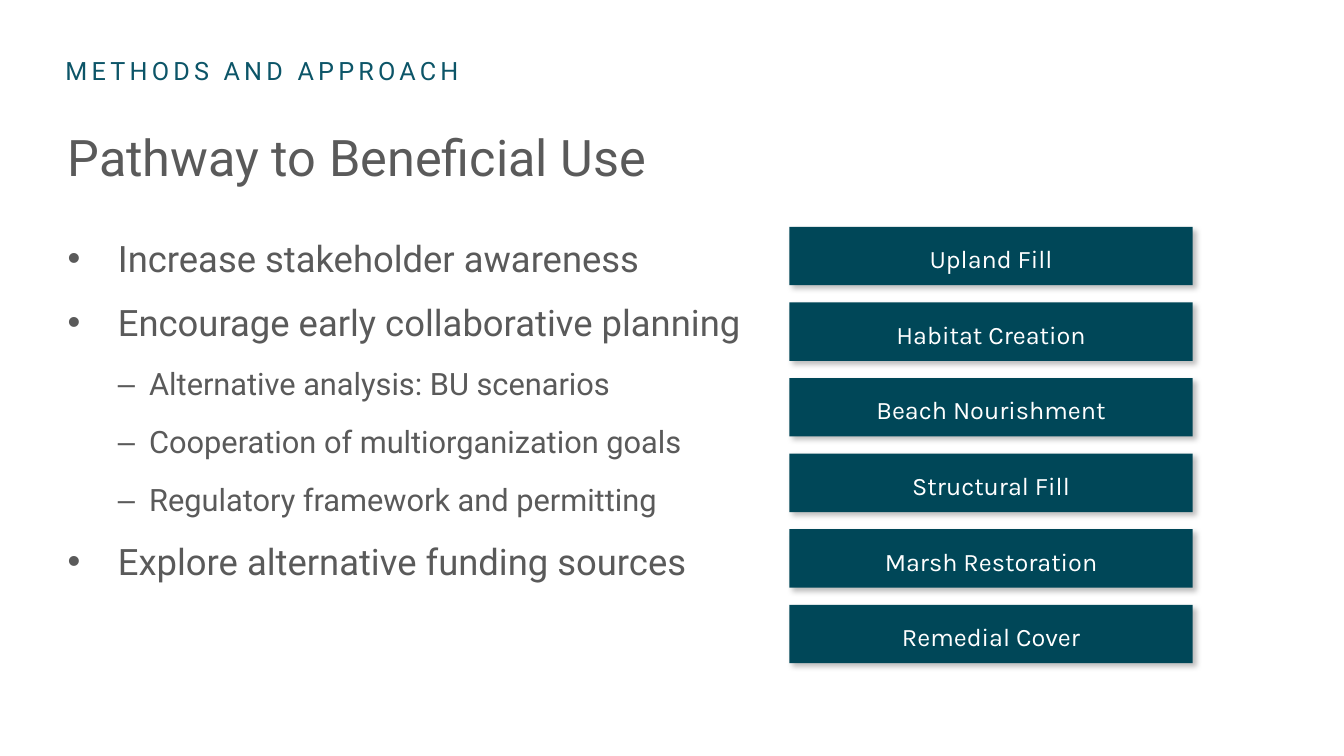
from lxml import etree
from pptx import Presentation
from pptx.dml.color import RGBColor
from pptx.enum.shapes import MSO_SHAPE
from pptx.enum.text import MSO_ANCHOR, PP_ALIGN
from pptx.oxml import parse_xml
from pptx.oxml.ns import qn
from pptx.util import Inches, Pt

RECT = MSO_SHAPE.RECTANGLE
TOP, MIDDLE = MSO_ANCHOR.TOP, MSO_ANCHOR.MIDDLE
LEFT, CENTER = PP_ALIGN.LEFT, PP_ALIGN.CENTER

TEAL, DEEP, GRAY, WHITE = "0C5568", "004758", "5A5A5A", "FFFFFF"
SHADOW = """<a:effectLst
 xmlns:a="http://schemas.openxmlformats.org/drawingml/2006/main">
 <a:outerShdw blurRad="50800" dist="38100" dir="2700000" algn="tl" rotWithShape="0">
 <a:srgbClr val="000000"><a:alpha val="25000"/></a:srgbClr>
 </a:outerShdw></a:effectLst>"""

# Per level: bullet sign, text size, left margin, hanging indent
LEVELS = [("•", 26, 0.5, -0.5), ("–", 22, 0.81, -0.31)]
POINTS = [
    (0, "Increase stakeholder awareness"),
    (0, "Encourage early collaborative planning"),
    (1, "Alternative analysis: BU scenarios"),
    (1, "Cooperation of multiorganization goals"),
    (1, "Regulatory framework and permitting"),
    (0, "Explore alternative funding sources"),
]
USES = ["Upland Fill", "Habitat Creation", "Beach Nourishment",
        "Structural Fill", "Marsh Restoration", "Remedial Cover"]


def color(code):
    return RGBColor.from_string(code)


def assign(target, values):
    for name, value in values.items():
        setattr(target, name, value)


class Deck:
    """Holds the text style and the current slide."""

    font = "Roboto"

    def __init__(self, slide):
        self.slide = slide

    def frame(self, shape, anchor, side=0, top=0, bottom=0):
        body = shape.text_frame
        assign(body, {
            "word_wrap": True, "vertical_anchor": anchor,
            "margin_left": Inches(side), "margin_right": Inches(side),
            "margin_top": Inches(top), "margin_bottom": Inches(bottom),
        })
        return body

    def add_text(self, para, text, size, code, font=None, align=LEFT):
        para.alignment = align
        run = para.add_run()
        run.text = text
        assign(run.font, {"name": font or self.font, "size": Pt(size)})
        run.font.color.rgb = color(code)
        return run

    def box(self, place, anchor, **margins):
        shape = self.slide.shapes.add_textbox(*map(Inches, place))
        return self.frame(shape, anchor, **margins)

    def label(self, place, text, size, code, track=0):
        body = self.box(place, MIDDLE)
        run = self.add_text(body.paragraphs[0], text, size, code)
        if track:
            run.font._element.set("spc", str(track * 100))

    def bullets(self, place, points):
        body = self.box(place, TOP, top=0.09, bottom=0.05)
        for index, (level, text) in enumerate(points):
            para = body.add_paragraph() if index else body.paragraphs[0]
            sign, size, margin, indent = LEVELS[level]
            props = para._p.get_or_add_pPr()
            props.set("marL", str(Inches(margin)))
            props.set("indent", str(Inches(indent)))
            etree.SubElement(props, qn("a:buFont")).set("typeface", "Arial")
            etree.SubElement(props, qn("a:buChar")).set("char", sign)
            assign(para, {"level": level, "space_after": Pt(12)})
            if index:
                para.space_before = Pt(3)
            self.add_text(para, text, size, GRAY)

    def button(self, place, text):
        shape = self.slide.shapes.add_shape(RECT, *map(Inches, place))
        shape.fill.solid()
        shape.fill.fore_color.rgb = color(DEEP)
        shape.line.fill.background()
        shape._element.spPr.append(parse_xml(SHADOW))
        body = self.frame(shape, MIDDLE, side=0.1, top=0.1, bottom=0.05)
        self.add_text(body.paragraphs[0], text, 18, WHITE, "Karla", CENTER)


def main():
    show = Presentation()
    assign(show, {"slide_width": Inches(13.33), "slide_height": Inches(7.5)})
    deck = Deck(show.slides.add_slide(show.slide_layouts[6]))

    # Section name and title
    deck.label((0.65, 0.55, 6.5, 0.3), "METHODS AND APPROACH", 18, TEAL, track=3)
    deck.label((0.67, 1.18, 12, 0.75), "Pathway to Beneficial Use", 36, GRAY)

    # Steps on the left
    deck.bullets((0.67, 2.25, 12, 4.02), POINTS)

    # Column of uses on the right
    for row, use in enumerate(USES):
        deck.button((7.83, 2.25 + 0.75 * row, 4, 0.58), use)

    show.save("out.pptx")


if __name__ == "__main__":
    main()
